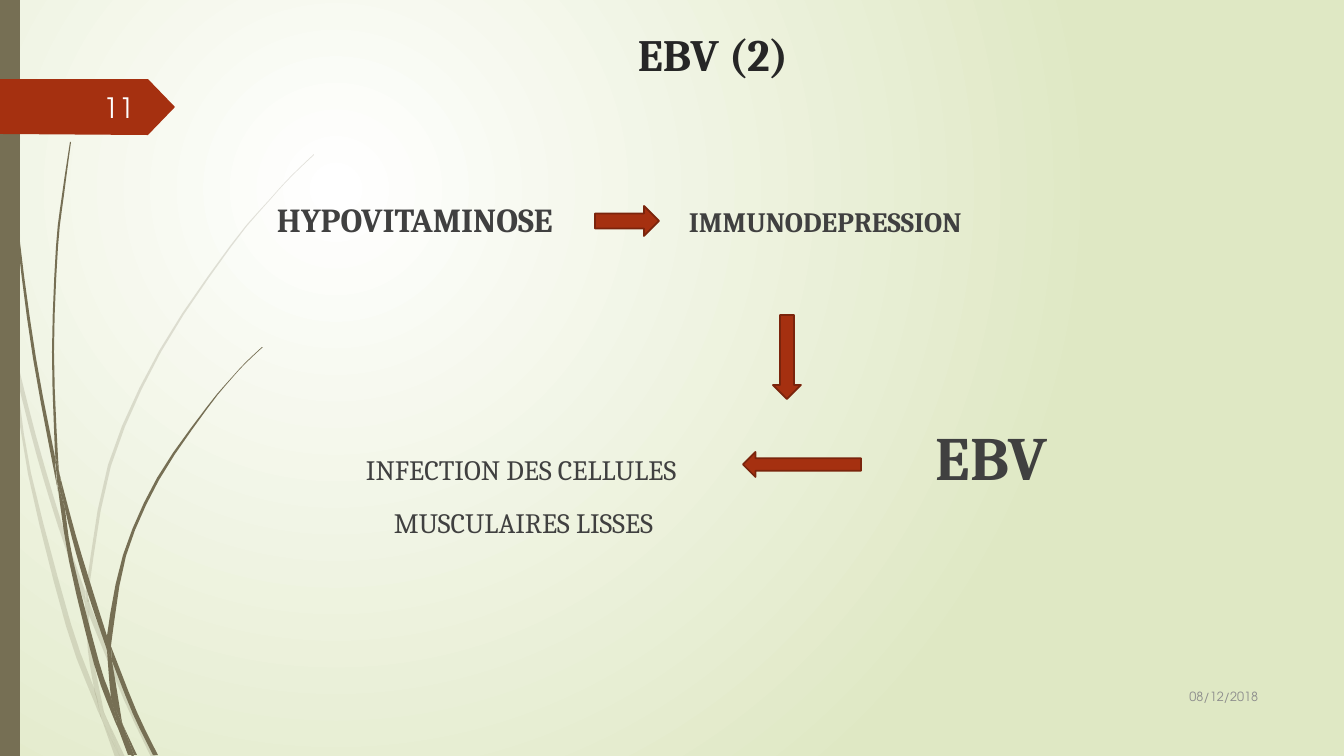
"""Builds the EBV slide: grass backdrop, page badge and a four-step arrow flow."""
from dataclasses import dataclass

from lxml.etree import SubElement
from pptx import Presentation
from pptx.dml.color import RGBColor
from pptx.enum.shapes import MSO_SHAPE
from pptx.enum.text import MSO_ANCHOR, PP_ALIGN
from pptx.oxml.ns import qn
from pptx.shapes.autoshape import Shape
from pptx.slide import Slide
from pptx.util import Emu, Pt

EMU_PER_PX = 914400 / 100.8
CURVE_STEPS = 3
Point = tuple[float, float]
Edge = tuple[Point, ...]
Outline = tuple[Edge, ...]


@dataclass(frozen=True)
class Theme:
    glow: str = "FFFFFF"
    field: str = "DFE8C4"
    grass: str = "766F54"
    accent: str = "A53010"
    accent_edge: str = "7A240C"
    heading: str = "262626"
    body: str = "404040"
    muted: str = "8C8C8C"
    badge_text: str = "FEFFFF"
    serif: str = "Cambria"
    sans: str = "TeX Gyre Adventor"
    title_size: int = 32
    cause_size: int = 24
    body_size: int = 20
    virus_size: int = 44
    date_size: int = 9
    edge_width: float = 1.25
    faint: int = 20


THEME = Theme()


@dataclass(frozen=True)
class Span:
    text: str
    size: int
    bold: bool = False


@dataclass(frozen=True)
class Line:
    spans: tuple[Span, ...]
    indent: int = 0
    before: int = 0
    tabs: tuple[int, ...] = ()


@dataclass(frozen=True)
class Label:
    lines: tuple[Line, ...]
    frame: tuple[int, int, int, int]
    colour: str
    face: str = THEME.serif
    align: PP_ALIGN = PP_ALIGN.LEFT
    anchor: MSO_ANCHOR = MSO_ANCHOR.MIDDLE


@dataclass(frozen=True)
class Arrow:
    kind: MSO_SHAPE
    frame: tuple[int, int, int, int]


FAINT_GRASS: tuple[Outline, ...] = (
    (((11, 353), (9, 325), (0, 284)), ((0, 301), (10, 347))),
    (((17, 379), (36, 453), (58, 526), (85, 604)),
     ((85, 591), (62, 524), (36, 436), (14, 348))),
    (((89, 601), (93, 612), (128, 698), (156, 757)), ((151, 757), (124, 700), (89, 615))),
    (((106, 717), (120, 757)), ((125, 757),)),
    (((11, 353), (28, 474), (66, 626), (93, 699), (102, 720)),
     ((100, 713), (94, 688), (71, 624), (31, 473), (17, 379))),
    (((85, 604), (88, 651), (94, 688), (97, 698), (106, 717)),
     ((104, 712), (92, 651), (89, 615), (89, 613))),
    (((89, 601), (89, 589), (111, 466), (161, 352), (231, 247), (270, 200), (292, 176),
      (314, 155)),
     ((314, 154), (291, 176), (270, 199), (230, 246), (159, 351), (108, 465), (86, 589),
      (86, 591))),
    (((102, 720), (115, 757)), ((120, 757),)),
    (((89, 613), (89, 615)), ((89, 601), (86, 591)), ((85, 604),)),
    (((106, 717), (97, 698), (94, 688)), ((100, 713), (102, 720), (120, 757))),
)

DARK_GRASS: tuple[Outline, ...] = (
    (((3, 0), (4, 48), (7, 111), (17, 235), (33, 358), (56, 481), (57, 485)),
     ((55, 461), (55, 457), (36, 358), (19, 234), (8, 110), (5, 48), (4, 0))),
    (((60, 476), (65, 509), (76, 553), (89, 597), (107, 650)),
     ((107, 638), (107, 636), (94, 595), (76, 536), (60, 476))),
    (((111, 646), (114, 654), (137, 712), (158, 755)), ((153, 755), (133, 714), (112, 661))),
    (((57, 481), (69, 561), (94, 664), (112, 714), (118, 728)),
     ((117, 723), (111, 697), (99, 662), (73, 560), (65, 509))),
    (((60, 476), (58, 457), (54, 352), (58, 247), (64, 195), (71, 142)),
     ((70, 142), (62, 195), (56, 247), (52, 352), (55, 453))),
    (((123, 725), (134, 755)), ((137, 755),)),
    (((60, 476), (55, 453)), ((57, 481), (65, 509))),
    (((112, 638), (126, 556), (159, 480), (207, 409), (233, 377), (247, 362), (263, 347)),
     ((262, 347), (247, 361), (233, 376), (206, 408), (157, 478), (123, 555), (107, 636),
      (111, 646))),
    (((118, 728), (128, 755)), ((132, 755),)),
    (((107, 650), (111, 697), (117, 712), (123, 725)), ((122, 722), (112, 661), (110, 656))),
    (((107, 650), (110, 656)), ((112, 661), (111, 646)), ((107, 636),)),
    (((123, 725), (117, 712), (111, 697)), ((117, 723), (118, 728), (131, 755), (134, 755))),
)

BADGE: Outline = (((0, 79), (148, 79)), ((175, 107),), ((148, 135), (0, 134)))

ARROWS = (
    Arrow(MSO_SHAPE.RIGHT_ARROW, (595, 206, 64, 30)),
    Arrow(MSO_SHAPE.DOWN_ARROW, (773, 315, 28, 84)),
    Arrow(MSO_SHAPE.LEFT_ARROW, (743, 452, 118, 25)),
)

LABELS = (
    Label((Line((Span("EBV (2)", THEME.title_size, True),), indent=405),),
          (223, 18, 983, 71), THEME.heading),
    Label((
        Line((Span("HYPOVITAMINOSE", THEME.cause_size, True),
              Span("\tIMMUNODEPRESSION", THEME.body_size, True)), tabs=(412,)),
        Line((Span("\tINFECTION DES CELLULES", THEME.body_size),
              Span("\tEBV", THEME.virus_size, True)), before=128, tabs=(89, 659)),
        Line((Span("MUSCULAIRES LISSES", THEME.body_size),), indent=117, before=9),
    ), (267, 194, 983, 416), THEME.body, anchor=MSO_ANCHOR.TOP),
    Label((Line((Span("08/12/2018", THEME.date_size),)),), (1142, 676, 126, 41),
          THEME.muted, THEME.sans, PP_ALIGN.RIGHT),
    Label((Line((Span("11", THEME.body_size),)),), (58, 87, 86, 40),
          THEME.badge_text, THEME.sans, PP_ALIGN.RIGHT),
)


def px(length: float) -> Emu:
    """Turn px into EMU."""
    return Emu(round(length * EMU_PER_PX))


def smooth(points: Edge) -> list[Point]:
    """Run a Catmull-Rom curve through three or more points."""
    if len(points) < 3:
        return list(points)
    padded = (points[0], *points, points[-1])
    curve: list[Point] = []
    for corners in zip(padded, padded[1:], padded[2:], padded[3:]):
        for step in range(CURVE_STEPS):
            t = step / CURVE_STEPS
            x, y = (q + t * (r - p) / 2 + t ** 2 * (2 * p - 5 * q + 4 * r - s) / 2
                    + t ** 3 * (3 * q - p - 3 * r + s) / 2 for p, q, r, s in zip(*corners))
            curve.append((x, y))
    return [*curve, points[-1]]


def paint(shape: Shape, colour: str) -> None:
    """Give a shape a flat fill without line or shadow."""
    shape.shadow.inherit = False
    shape.fill.solid()
    shape.fill.fore_color.rgb = RGBColor.from_string(colour)
    shape.line.fill.background()


def draw_background(page: Slide) -> None:
    """Fill the page with a radial glow."""
    fill = page.background.fill
    fill.gradient()
    for stop, colour in zip(fill.gradient_stops, (THEME.glow, THEME.field)):
        stop.color.rgb = RGBColor.from_string(colour)
    gradient = next(page.element.iter(qn("a:gradFill")))
    gradient.remove(gradient.find(qn("a:lin")))
    radial = SubElement(gradient, qn("a:path"), {"path": "circle"})
    SubElement(radial, qn("a:fillToRect"),
               {"l": "50000", "t": "50000", "r": "100000", "b": "100000"})


def draw_outline(page: Slide, outline: Outline, colour: str, opacity: int = 100) -> None:
    """Draw a closed outline made of smooth edges."""
    points = [(px(x), px(y)) for edge in outline for x, y in smooth(edge)]
    builder = page.shapes.build_freeform(*points[0], scale=1.0)
    builder.add_line_segments(points[1:], close=True)
    shape = builder.convert_to_shape()
    paint(shape, colour)
    if opacity < 100:
        tint = next(shape.element.spPr.iter(qn("a:srgbClr")))
        SubElement(tint, qn("a:alpha"), {"val": str(opacity * 1000)})


def draw_arrow(page: Slide, arrow: Arrow) -> None:
    """Draw a block arrow with a dark edge."""
    shape = page.shapes.add_shape(arrow.kind, *map(px, arrow.frame))
    paint(shape, THEME.accent)
    shape.line.color.rgb = RGBColor.from_string(THEME.accent_edge)
    shape.line.width = Pt(THEME.edge_width)


def draw_label(page: Slide, label: Label) -> None:
    """Draw a text box with indents and tab stops."""
    frame = page.shapes.add_textbox(*map(px, label.frame)).text_frame
    frame.word_wrap = True
    frame.vertical_anchor = label.anchor
    for index, line in enumerate(label.lines):
        para = frame.add_paragraph() if index else frame.paragraphs[0]
        para.alignment = label.align
        para.space_before = Pt(line.before)
        for part in line.spans:
            span = para.add_run()
            span.text = part.text
            span.font.name = label.face
            span.font.size = Pt(part.size)
            span.font.bold = part.bold
            span.font.color.rgb = RGBColor.from_string(label.colour)
        layout = para._p.get_or_add_pPr()
        layout.set("marL", str(px(line.indent)))
        if line.tabs:
            stops = SubElement(layout, qn("a:tabLst"))
            for stop in line.tabs:
                SubElement(stops, qn("a:tab"), {"pos": str(px(stop)), "algn": "l"})


def main() -> None:
    """Build and save the deck."""
    deck = Presentation()
    deck.slide_width, deck.slide_height = px(1344), px(756)
    page = deck.slides.add_slide(deck.slide_layouts[6])
    draw_background(page)
    for outline in FAINT_GRASS:
        draw_outline(page, outline, THEME.grass, THEME.faint)
    for outline in DARK_GRASS:
        draw_outline(page, outline, THEME.grass)
    stripe = page.shapes.add_shape(MSO_SHAPE.RECTANGLE, 0, 0, px(20), px(756))
    paint(stripe, THEME.grass)
    draw_outline(page, BADGE, THEME.accent)
    for arrow in ARROWS:
        draw_arrow(page, arrow)
    for label in LABELS:
        draw_label(page, label)
    deck.save("out.pptx")


if __name__ == "__main__":
    main()
